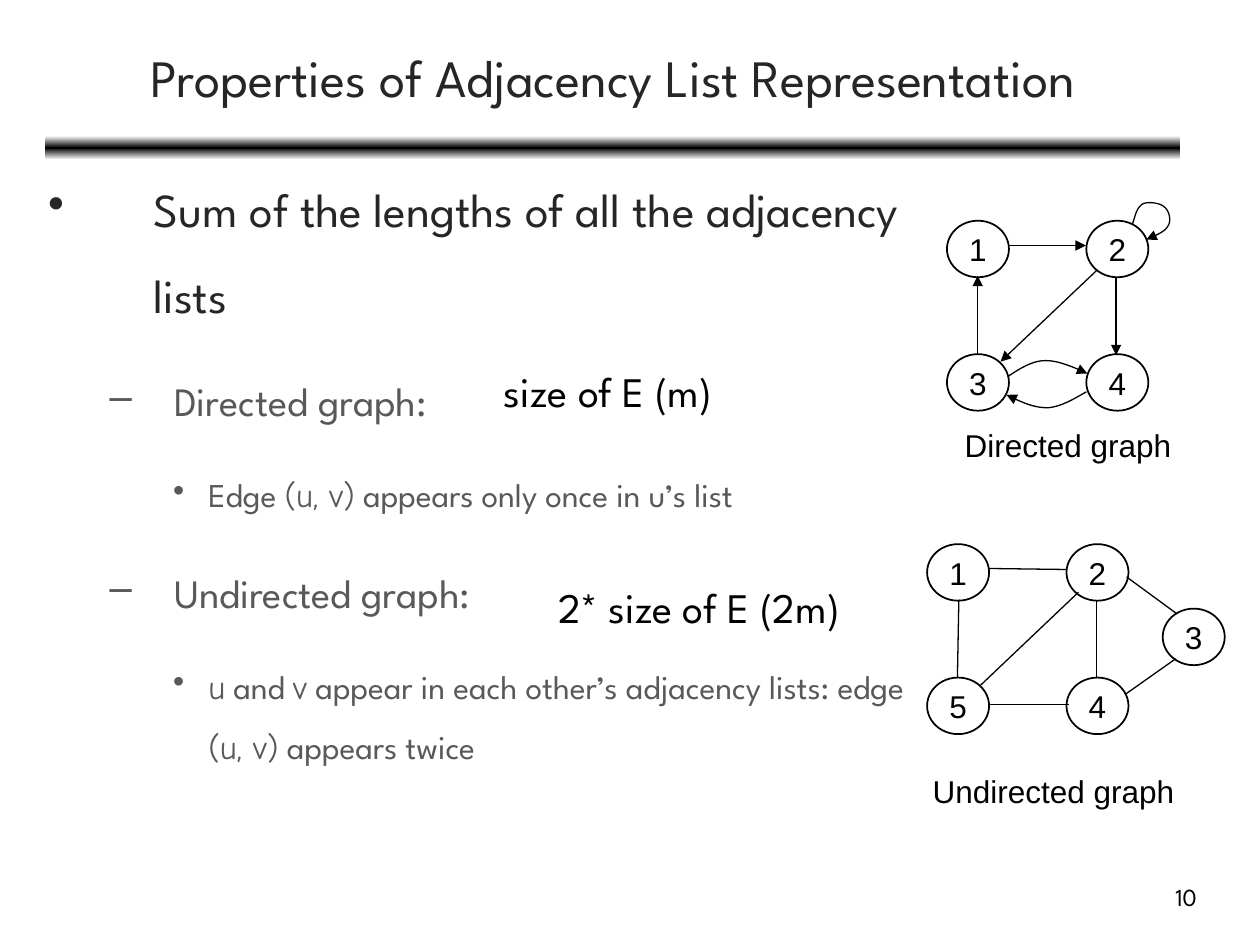
from copy import deepcopy

from lxml import etree
from pptx import Presentation
from pptx.dml.color import RGBColor
from pptx.enum.shapes import MSO_CONNECTOR, MSO_SHAPE
from pptx.enum.text import MSO_ANCHOR, PP_ALIGN
from pptx.oxml.ns import qn
from pptx.util import Cm, Pt

BLACK = RGBColor(0x00, 0x00, 0x00)
WHITE = RGBColor(0xFF, 0xFF, 0xFF)
DARK = RGBColor(0x26, 0x26, 0x26)
GRAY = RGBColor(0x59, 0x59, 0x59)
SPARTAN, COMIC, ARIAL = "League Spartan", "Comic Neue", "Arial"
LEFT, CENTER, RIGHT = PP_ALIGN.LEFT, PP_ALIGN.CENTER, PP_ALIGN.RIGHT
TOP, MIDDLE = MSO_ANCHOR.TOP, MSO_ANCHOR.MIDDLE
OVAL, ROUNDED = MSO_SHAPE.OVAL, MSO_SHAPE.ROUNDED_RECTANGLE
STRAIGHT = MSO_CONNECTOR.STRAIGHT

NODE_W, NODE_H = 1.25, 1.14
COL_STEP, ROW_STEP = 2.81, 2.69

# Outline levels: size, colour, bullet, left margin and hanging indent in cm
LEVELS = [
    (27, DARK, "•", 2.13, 2.13),
    (23, GRAY, "–", 2.54, 1.3),
    (19, GRAY, "•", 3.23, 0.71),
]
OUTLINE = [
    (0, [("Sum of the lengths of all the adjacency lists", SPARTAN)]),
    (1, [("Directed graph:", SPARTAN)]),
    (2, [("Edge ", SPARTAN), ("(u, v)", COMIC),
         (" appears only once in u’s list", SPARTAN)]),
    (1, [("Undirected graph:", SPARTAN)]),
    (2, [("u", COMIC), (" and ", SPARTAN), ("v", COMIC),
         (" appear in each other’s adjacency lists: edge ", SPARTAN),
         ("(u, v)", COMIC), (" appears twice", SPARTAN)]),
]

# Edges as x1, y1, x2, y2 in cm
UNDIRECTED_EDGES = [
    (19.94, 11.46, 21.49, 11.48), (22.1, 12.12, 22.1, 13.67),
    (19.3, 13.67, 19.33, 12.09), (21.74, 11.94, 19.76, 13.82),
    (19.91, 14.2, 21.54, 14.2), (22.71, 11.63, 23.72, 12.37),
    (22.68, 14, 23.7, 13.28),
]
DIRECTED_EDGES = [
    (20.35, 4.95, 21.89, 4.95), (22.5, 5.59, 22.5, 7.16),
    (19.71, 7.14, 19.71, 5.56), (22.12, 5.44, 20.17, 7.29),
]
# Chains of cubic Bezier control points in cm: 3 to 4, 4 to 3, loop on 2
CURVED_EDGES = [
    [(20.32, 7.59), (20.55, 7.44), (20.8, 7.27), (21.08, 7.27),
     (21.34, 7.27), (21.64, 7.4), (21.92, 7.53)],
    [(21.9, 7.9), (21.64, 8.05), (21.39, 8.2), (21.13, 8.22),
     (20.85, 8.23), (20.57, 8.1), (20.29, 7.96)],
    [(22.83, 4.52), (22.89, 4.34), (22.91, 4.19), (23.04, 4.11),
     (23.14, 4.06), (23.39, 4.09), (23.47, 4.17), (23.57, 4.24),
     (23.62, 4.45), (23.55, 4.55), (23.5, 4.67), (23.29, 4.75),
     (23.11, 4.83)],
]


def bezier_points(chain, steps=10):
    points = [chain[0]]
    for i in range(0, len(chain) - 1, 3):
        a, b, c, d = chain[i:i + 4]
        for k in range(1, steps + 1):
            t = k / steps
            u = 1 - t
            points.append(tuple(
                u**3 * a[n] + 3 * u * u * t * b[n] + 3 * u * t * t * c[n] + t**3 * d[n]
                for n in (0, 1)))
    return points


class Deck:
    def __init__(self, prs):
        self.s = prs.slides.add_slide(prs.slide_layouts[6])

    def frame(self, sp, anchor=TOP, wrap=True):
        tf = sp.text_frame
        values = {"margin_left": 0, "margin_right": 0, "margin_top": 0,
                  "margin_bottom": 0, "vertical_anchor": anchor, "word_wrap": wrap}
        for name, value in values.items():
            setattr(tf, name, value)
        return tf

    def run(self, p, text, size, font=ARIAL, color=BLACK):
        r = p.add_run()
        r.text = text
        for name, value in {"size": Pt(size), "name": font}.items():
            setattr(r.font, name, value)
        r.font.color.rgb = color

    def text(self, box, text, size, font=ARIAL, color=BLACK, align=LEFT,
             anchor=TOP, wrap=True):
        sp = self.s.shapes.add_textbox(*map(Cm, box))
        p = self.frame(sp, anchor, wrap).paragraphs[0]
        p.alignment = align
        self.run(p, text, size, font, color)

    def outline(self, box, items):
        tf = self.frame(self.s.shapes.add_textbox(*map(Cm, box)))
        for i, (level, runs) in enumerate(items):
            size, color, bullet, margin, hang = LEVELS[level]
            p = tf.add_paragraph() if i else tf.paragraphs[0]
            values = {"level": level, "line_spacing": 1.5, "space_before": Pt(17)}
            for name, value in values.items():
                setattr(p, name, value)
            pPr = p._p.get_or_add_pPr()
            pPr.set("marL", str(Cm(margin)))
            pPr.set("indent", str(-Cm(hang)))
            clr = etree.SubElement(pPr, qn("a:buClr"))
            etree.SubElement(clr, qn("a:srgbClr"), val=str(color))
            etree.SubElement(pPr, qn("a:buChar"), char=bullet)
            for text, font in runs:
                self.run(p, text, size, font, color)

    def gradient_bar(self, box):
        sp = self.s.shapes.add_shape(ROUNDED, *map(Cm, box))
        sp.shadow.inherit = False
        sp.line.fill.background()
        sp.fill.gradient()
        sp.fill.gradient_angle = 90
        gs = sp._element.spPr.find(".//" + qn("a:gs"))
        middle = deepcopy(gs)
        gs.addnext(middle)
        for stop, place, color in zip(sp.fill.gradient_stops, (0, 0.5, 1),
                                      (WHITE, BLACK, WHITE)):
            stop.position = place
            stop.color.rgb = color

    def node(self, x, y, label):
        sp = self.s.shapes.add_shape(OVAL, Cm(x), Cm(y), Cm(NODE_W), Cm(NODE_H))
        sp.shadow.inherit = False
        sp.fill.background()
        self.stroke(sp, 1)
        p = self.frame(sp, MIDDLE, False).paragraphs[0]
        p.alignment = CENTER
        self.run(p, label, 18)

    def grid(self, x, y, labels):
        for i, label in enumerate(labels):
            row, col = divmod(i, 2)
            self.node(x + col * COL_STEP, y + row * ROW_STEP, label)

    def stroke(self, sp, width, arrow=False):
        sp.line.color.rgb = BLACK
        sp.line.width = Pt(width)
        if arrow:
            etree.SubElement(sp.line._get_or_add_ln(), qn("a:tailEnd"), type="triangle")

    def edge(self, ends, arrow=False):
        sp = self.s.shapes.add_connector(STRAIGHT, *map(Cm, ends))
        self.stroke(sp, 0.75, arrow)
        etree.SubElement(sp._element.spPr, qn("a:effectLst"))

    def curve(self, chain):
        points = [(Cm(x), Cm(y)) for x, y in bezier_points(chain)]
        builder = self.s.shapes.build_freeform(*points[0])
        builder.add_line_segments(points[1:], close=False)
        sp = builder.convert_to_shape()
        sp.shadow.inherit = False
        sp.fill.background()
        self.stroke(sp, 0.75, True)


def main():
    prs = Presentation()
    prs.slide_width, prs.slide_height = Cm(25.4), Cm(19.05)
    deck = Deck(prs)

    # Title and outline
    deck.gradient_bar((0.91, 2.74, 22.89, 0.48))
    deck.text((0.94, 0.28, 22.86, 2.51), "Properties of Adjacency List Representation",
              30, SPARTAN, DARK, CENTER, MIDDLE)
    deck.outline((0.97, 3.07, 17.68, 14.4), OUTLINE)

    # Undirected graph
    deck.grid(18.69, 10.97, "1254")
    deck.node(23.44, 12.27, "3")
    for ends in UNDIRECTED_EDGES:
        deck.edge(ends)
    deck.text((18.8, 15.57, 4.9, 0.71), "Undirected graph", 18, wrap=False)

    # Directed graph
    deck.grid(19.09, 4.45, "1234")
    for ends in DIRECTED_EDGES:
        deck.edge(ends, arrow=True)
    for chain in CURVED_EDGES:
        deck.curve(chain)
    deck.text((18.8, 8.59, 5.46, 0.71), "Directed graph", 18, align=CENTER)

    # Answers and page number
    deck.text((10.16, 7.37, 4.85, 1.02), "size of E (m)", 24, SPARTAN, wrap=False)
    deck.text((11.25, 11.73, 6.38, 1.02), "2* size of E (2m)", 24, SPARTAN, wrap=False)
    deck.text((18.21, 17.78, 5.92, 0.61), "10", 14, SPARTAN, align=RIGHT)

    prs.save("out.pptx")


if __name__ == "__main__":
    main()
